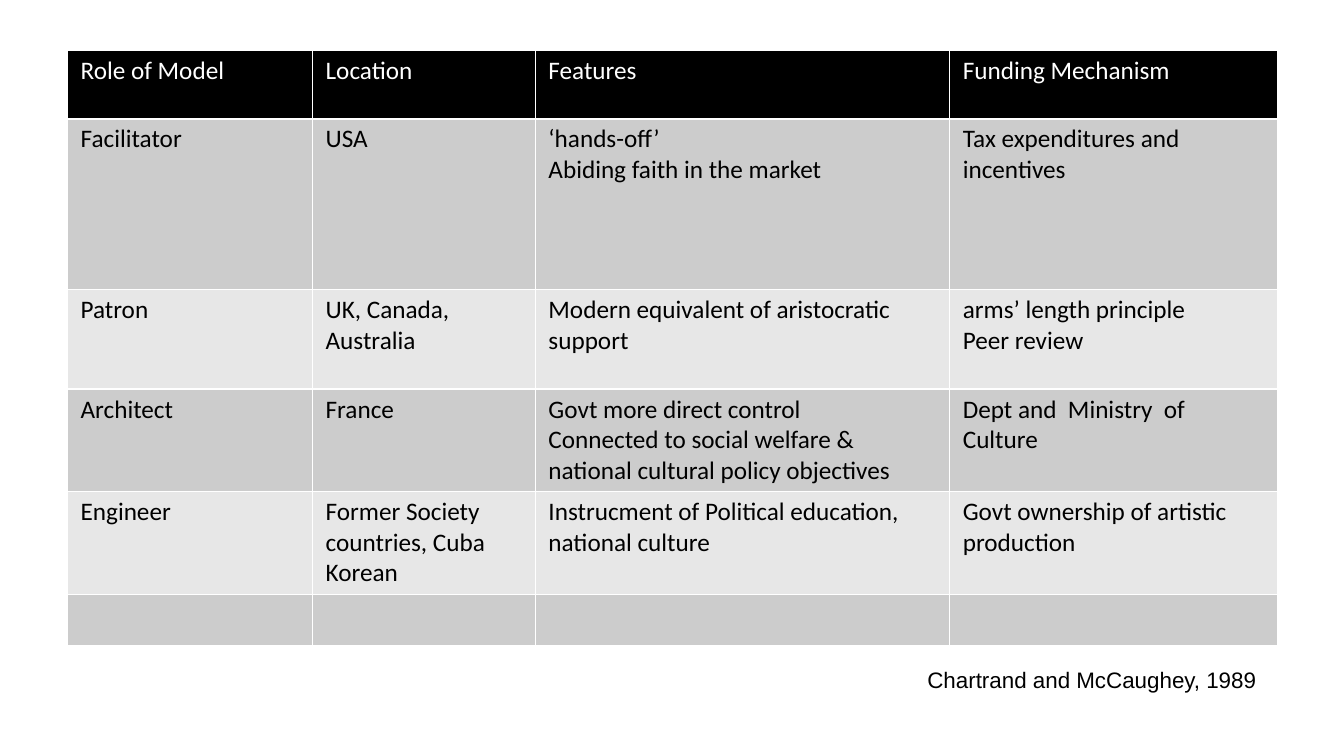
from lxml import etree
from pptx import Presentation
from pptx.dml.color import RGBColor
from pptx.enum.text import MSO_AUTO_SIZE
from pptx.oxml.ns import qn
from pptx.util import Inches, Pt

FIT_SHAPE = MSO_AUTO_SIZE.SHAPE_TO_FIT_TEXT
BLANK_LAYOUT = 6
COLORS = {
    "header": "000000",
    "dark_band": "CCCCCC",
    "light_band": "E7E7E7",
    "rule": "FFFFFF",
    "header_text": "FFFFFF",
    "body_text": "000000",
}
COLUMN_WIDTHS = [2.43, 2.21, 4.11, 3.25]
ROW_HEIGHTS = [0.68, 1.69, 0.99, 1.01, 1.02, 0.51]
MODELS = [
    ["Role of Model", "Location", "Features", "Funding Mechanism"],
    ["Facilitator", "USA", "‘hands-off’\nAbiding faith in the market",
     "Tax expenditures and incentives"],
    ["Patron", "UK, Canada, Australia",
     "Modern equivalent of aristocratic support",
     "arms’ length principle\nPeer review"],
    ["Architect", "France",
     "Govt more direct control\n"
     "Connected to social welfare & national cultural policy objectives",
     "Dept and  Ministry  of Culture"],
    ["Engineer", "Former Society countries, Cuba Korean",
     "Instrucment of Political education, national culture",
     "Govt ownership of artistic production"],
    ["", "", "", ""],
]


def write_text(frame, text, font="Calibri", size=18, color="body_text"):
    """Fill a text frame, one paragraph for each line of text."""
    frame.text = text
    for paragraph in frame.paragraphs:
        paragraph.font.name = font
        paragraph.font.size = Pt(size)
        paragraph.font.color.rgb = RGBColor.from_string(COLORS[color])


def rule_cell(cell, width=1):
    """Draw a thin rule on all four sides of a cell."""
    properties = cell._tc.get_or_add_tcPr()
    for side in ("a:lnL", "a:lnR", "a:lnT", "a:lnB"):
        line = etree.SubElement(properties, qn(side), w=str(Pt(width)))
        fill = etree.SubElement(line, qn("a:solidFill"))
        etree.SubElement(fill, qn("a:srgbClr"), val=COLORS["rule"])


def style_cell(cell, band):
    """Set the margins, rules and fill of a cell."""
    cell.margin_left = cell.margin_right = Inches(0.13)
    cell.margin_top = cell.margin_bottom = Inches(0.05)
    rule_cell(cell)
    cell.fill.solid()
    cell.fill.fore_color.rgb = RGBColor.from_string(COLORS[band])


def band_of(row):
    """Name the fill of a row: header first, then alternating bands."""
    if row == 0:
        return "header"
    return "dark_band" if row % 2 else "light_band"


def add_models_table(slide):
    """Add the table that compares the models of arts support."""
    table = slide.shapes.add_table(
        len(MODELS), len(COLUMN_WIDTHS), Inches(0.67), Inches(0.5),
        Inches(sum(COLUMN_WIDTHS)), Inches(sum(ROW_HEIGHTS))).table
    for column, width in zip(table.columns, COLUMN_WIDTHS):
        column.width = Inches(width)
    for row, (entries, height) in enumerate(zip(MODELS, ROW_HEIGHTS)):
        table.rows[row].height = Inches(height)
        for column, entry in enumerate(entries):
            cell = table.cell(row, column)
            style_cell(cell, band_of(row))
            write_text(cell.text_frame, entry,
                       color="body_text" if row else "header_text")


def add_citation(slide):
    """Add the source of the table below its right edge."""
    citation = slide.shapes.add_textbox(
        Inches(9.1), Inches(6.56), Inches(3.5), Inches(0.37)).text_frame
    citation.word_wrap = False
    citation.auto_size = FIT_SHAPE
    write_text(citation, "Chartrand and McCaughey, 1989", font="Arial", size=16)


def main():
    """Build the slide and save it."""
    deck = Presentation()
    deck.slide_width, deck.slide_height = Inches(13.33), Inches(7.5)
    slide = deck.slides.add_slide(deck.slide_layouts[BLANK_LAYOUT])
    add_models_table(slide)
    add_citation(slide)
    deck.save("out.pptx")


if __name__ == "__main__":
    main()
